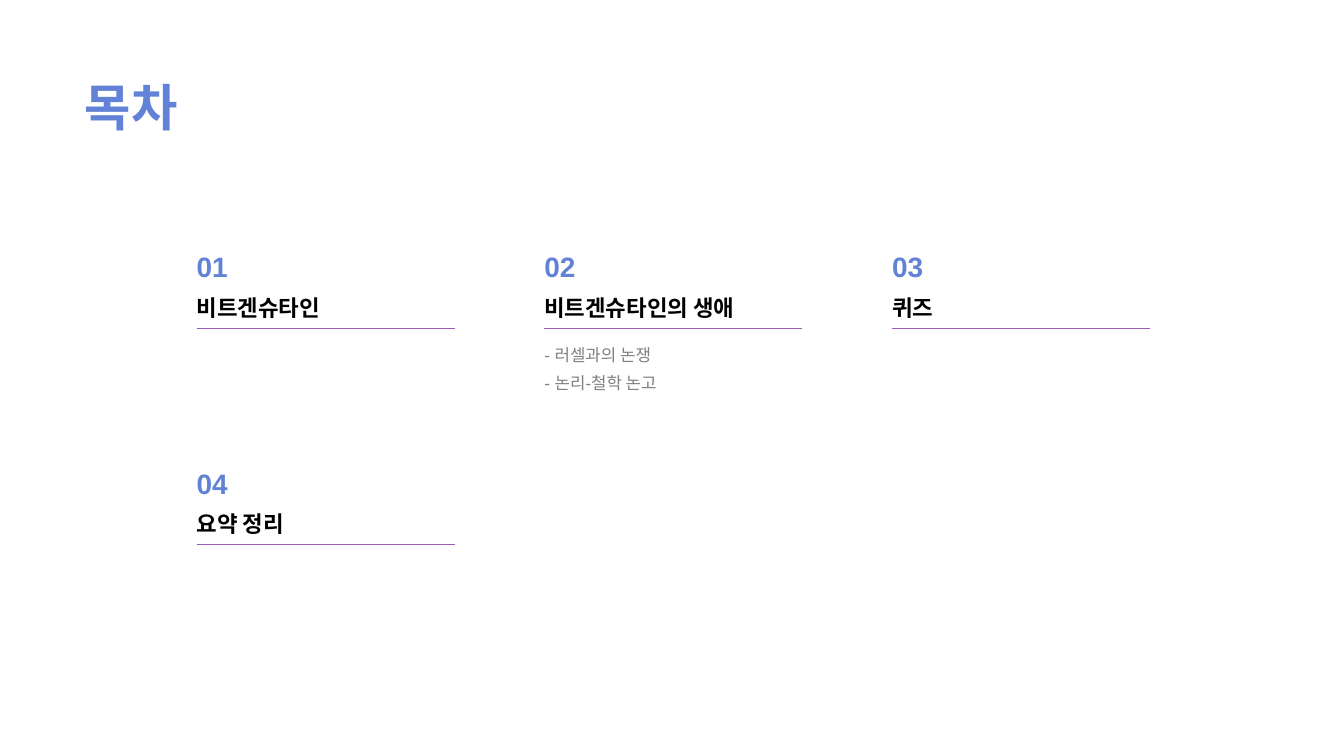
"""Builds a table-of-contents slide with four numbered sections."""
from lxml import etree
from pptx import Presentation
from pptx.dml.color import RGBColor
from pptx.enum.shapes import MSO_CONNECTOR
from pptx.enum.text import MSO_ANCHOR, MSO_AUTO_SIZE, PP_ALIGN
from pptx.oxml.ns import qn
from pptx.util import Pt

TITLE = "목차"
SECTIONS = [
    ("비트겐슈타인", []),
    ("비트겐슈타인의 생애", ["- 러셀과의 논쟁", "- 논리-철학 논고"]),
    ("퀴즈", []),
    ("요약 정리", []),
]

STRAIGHT = MSO_CONNECTOR.STRAIGHT
TOP = MSO_ANCHOR.TOP
NO_AUTOFIT = MSO_AUTO_SIZE.NONE
LEFT = PP_ALIGN.LEFT

FONT = "Arial"
BLUE = RGBColor(0x61, 0x82, 0xD6)
PURPLE = RGBColor(0x9D, 0x5C, 0xBB)
BLACK = RGBColor(0, 0, 0)
GRAY = RGBColor(0x80, 0x80, 0x80)

COLUMNS = 3
GRID_LEFT, GRID_TOP = 140.4, 178.5
COLUMN_STEP, ROW_STEP = 248.4, 154.4
SECTION_WIDTH = 184.4
HEADING_OFFSET, RULE_OFFSET, DETAILS_OFFSET = 31.7, 56.2, 62


def place(shape, left, top, width, height):
    shape.left, shape.top = Pt(left), Pt(top)
    shape.width, shape.height = Pt(width), Pt(height)


def write(shape, lines, size, color, bold=True, spacing=1.0):
    frame = shape.text_frame
    frame.text = "\n".join(lines)
    frame.word_wrap = True
    frame.auto_size = NO_AUTOFIT
    frame.vertical_anchor = TOP
    frame.margin_left = frame.margin_right = 0
    frame.margin_top = frame.margin_bottom = 0
    for paragraph in frame.paragraphs:
        paragraph.alignment = LEFT
        paragraph.line_spacing = spacing
        for run in paragraph.runs:
            run.font.name = FONT
            run.font.size = Pt(size)
            run.font.bold = bold
            run.font.color.rgb = color


def add_text(slide, left, top, height, lines, size, color, **style):
    box = slide.shapes.add_textbox(0, 0, 0, 0)
    place(box, left, top, SECTION_WIDTH, height)
    write(box, lines, size, color, **style)


def add_rule(slide, left, top):
    rule = slide.shapes.add_connector(
        STRAIGHT, Pt(left), Pt(top), Pt(left + SECTION_WIDTH), Pt(top))
    rule.line.color.rgb = PURPLE
    rule.line.width = Pt(0.5)
    etree.SubElement(rule._element.spPr, qn("a:effectLst"))


def add_section(slide, index, heading, details):
    row, column = divmod(index, COLUMNS)
    left = GRID_LEFT + column * COLUMN_STEP
    top = GRID_TOP + row * ROW_STEP
    add_text(slide, left, top, 24.5, [f"{index + 1:02}"], 20, BLUE)
    add_text(slide, left, top + HEADING_OFFSET, 19.5, [heading], 16, BLACK)
    add_rule(slide, left, top + RULE_OFFSET)
    if details:
        add_text(slide, left, top + DETAILS_OFFSET, 41, details, 12, GRAY,
                 bold=False, spacing=1.4)


def main():
    presentation = Presentation()
    presentation.slide_width, presentation.slide_height = Pt(960), Pt(540)
    slide = presentation.slides.add_slide(presentation.slide_layouts[5])
    title = slide.shapes.title
    place(title, 60.5, 54.7, 826.5, 51)
    write(title, [TITLE], 36, BLUE)
    for index, (heading, details) in enumerate(SECTIONS):
        add_section(slide, index, heading, details)
    presentation.save("out.pptx")


if __name__ == "__main__":
    main()
